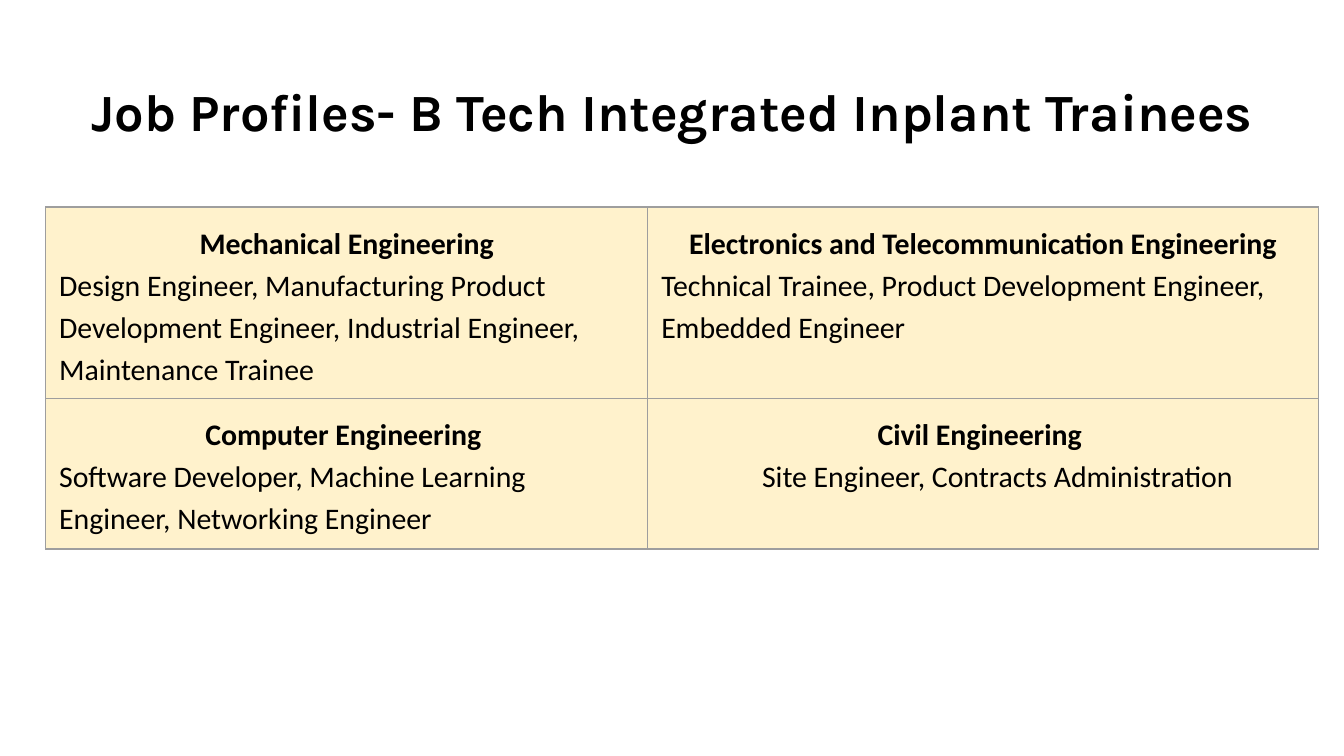
from dataclasses import dataclass

from lxml import etree
from pptx import Presentation
from pptx.dml.color import RGBColor
from pptx.enum.text import MSO_ANCHOR, PP_ALIGN
from pptx.oxml.ns import qn
from pptx.util import Inches, Pt

CENTER, LEFT = PP_ALIGN.CENTER, PP_ALIGN.LEFT
TOP = MSO_ANCHOR.TOP


@dataclass(frozen=True)
class Theme:
    ink: str = "000000"
    cell_fill: str = "FFF2CC"
    border: str = "9E9E9E"
    border_width: float = 0.75
    title_font: str = "Karla"
    body_font: str = "Calibri"
    title_size: int = 28
    body_size: int = 16
    line_spacing: float = 1.15
    inset: float = 0.1


THEME = Theme()
PAGE_WIDTH = 10
PAGE_HEIGHT = PAGE_WIDTH * 9 / 16
TITLE = "Job Profiles- B Tech Integrated Inplant Trainees"
COLUMN_WIDTHS = (4.48, 4.99)
ROW_HEIGHTS = (1.01, 0.92)  # minimum heights: rows grow with their text

# Each profile: department, jobs, left indent of the jobs
PROFILES = (
    (
        ("Mechanical Engineering",
         "Design Engineer, Manufacturing Product Development Engineer, "
         "Industrial Engineer, Maintenance Trainee", 0),
        ("Electronics and Telecommunication Engineering",
         "Technical Trainee, Product Development Engineer, Embedded Engineer", 0),
    ),
    (
        ("Computer Engineering ",
         "Software Developer, Machine Learning Engineer, Networking Engineer", 0),
        ("Civil Engineering ", "Site Engineer, Contracts Administration", 0.75),
    ),
)


def set_insets(target):
    for side in ("left", "top", "right", "bottom"):
        setattr(target, f"margin_{side}", Inches(THEME.inset))


def write_para(para, text, align, font, size, bold):
    para.alignment = align
    span = para.add_run()
    span.text = text
    for name, value in {"name": font, "size": Pt(size), "bold": bold}.items():
        setattr(span.font, name, value)
    span.font.color.rgb = RGBColor.from_string(THEME.ink)


def set_borders(cell):
    properties = cell._tc.get_or_add_tcPr()
    for index, side in enumerate(("lnL", "lnR", "lnT", "lnB")):
        line = etree.Element(qn(f"a:{side}"), w=str(Pt(THEME.border_width)))
        fill = etree.SubElement(line, qn("a:solidFill"))
        etree.SubElement(fill, qn("a:srgbClr"), val=THEME.border)
        properties.insert(index, line)  # borders come before the fill


def add_title(page, left, top, width, height):
    box = page.shapes.add_textbox(*map(Inches, (left, top, width, height)))
    frame = box.text_frame
    frame.word_wrap = True
    frame.vertical_anchor = TOP
    set_insets(frame)
    write_para(frame.paragraphs[0], TITLE, CENTER,
               THEME.title_font, THEME.title_size, True)


def fill_cell(cell, department, jobs, indent):
    cell.fill.solid()
    cell.fill.fore_color.rgb = RGBColor.from_string(THEME.cell_fill)
    cell.vertical_anchor = TOP
    set_insets(cell)
    set_borders(cell)
    frame = cell.text_frame
    heading, details = frame.paragraphs[0], frame.add_paragraph()
    for para, text, align, bold in ((heading, department, CENTER, True),
                                    (details, jobs, LEFT, False)):
        write_para(para, text, align, THEME.body_font, THEME.body_size, bold)
        para.line_spacing = THEME.line_spacing
    if indent:
        details._p.get_or_add_pPr().set("marL", str(Inches(indent)))


def add_profiles(page, left, top):
    size = (sum(COLUMN_WIDTHS), sum(ROW_HEIGHTS))
    table = page.shapes.add_table(len(ROW_HEIGHTS), len(COLUMN_WIDTHS),
                                  *map(Inches, (left, top, *size))).table
    table.first_row = table.horz_banding = False
    for column, width in zip(table.columns, COLUMN_WIDTHS):
        column.width = Inches(width)
    for row, height, profiles in zip(table.rows, ROW_HEIGHTS, PROFILES):
        row.height = Inches(height)
        for cell, profile in zip(row.cells, profiles):
            fill_cell(cell, *profile)


def main():
    deck = Presentation()
    deck.slide_width, deck.slide_height = Inches(PAGE_WIDTH), Inches(PAGE_HEIGHT)
    page = deck.slides.add_slide(deck.slide_layouts[6])
    add_title(page, 0.34, 0.49, 9.32, 0.63)
    add_profiles(page, 0.34, 1.54)
    deck.save("out.pptx")


if __name__ == "__main__":
    main()
